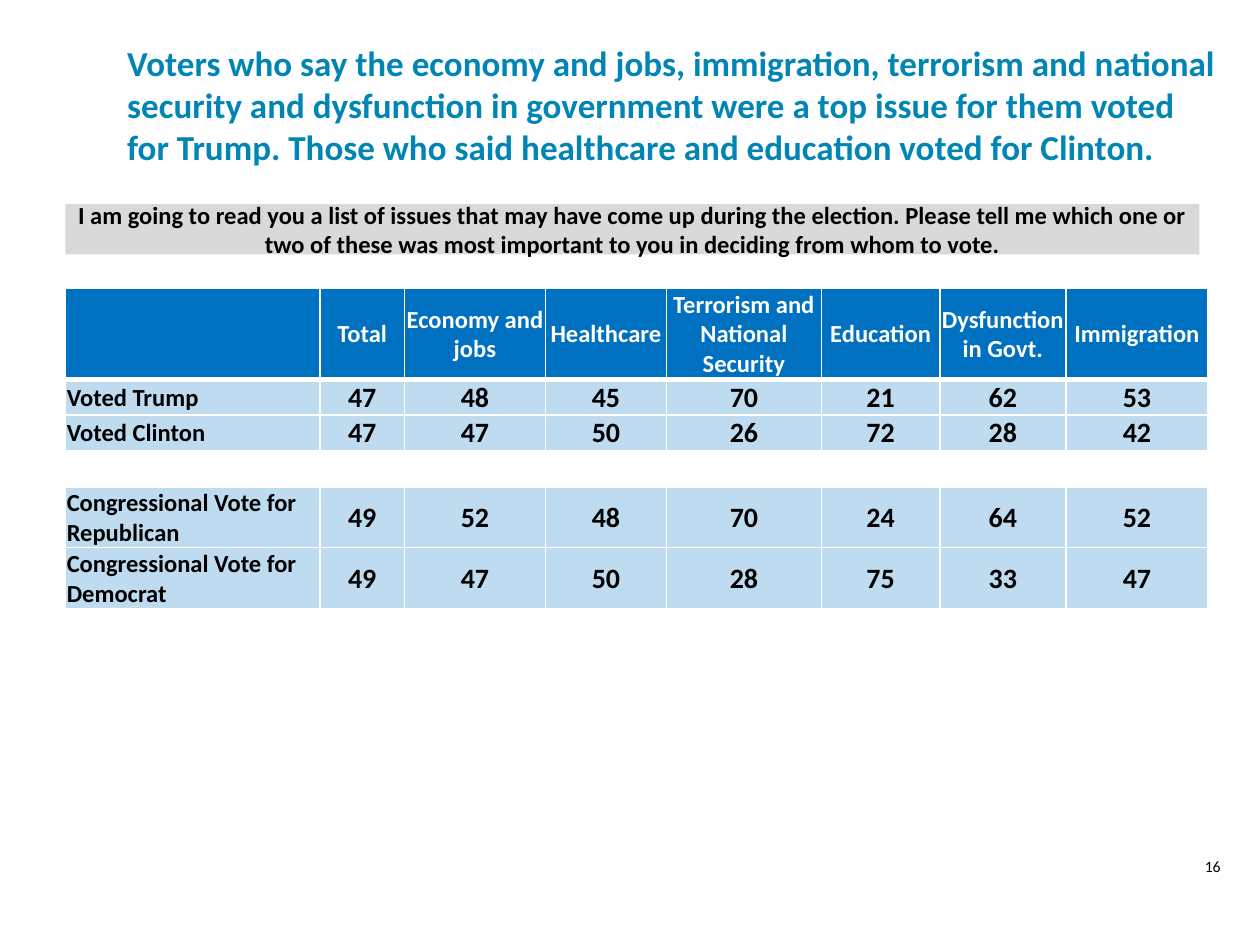
from lxml.etree import SubElement as Sub
from pptx import Presentation
from pptx.dml.color import RGBColor
from pptx.enum.shapes import MSO_SHAPE as Shape
from pptx.enum.text import MSO_ANCHOR as Anchor, MSO_AUTO_SIZE as Auto, PP_ALIGN as Align
from pptx.oxml.ns import qn
from pptx.util import Inches, Pt

TITLE = [
    "Voters who say the economy and jobs, immigration, terrorism and national "
    "security and dysfunction in government were a top issue for them voted",
    "for Trump. Those who said healthcare and education voted for Clinton.",
]
ASK = ("I am going to read you a list of issues that may have come up during the election. "
       "Please tell me which one or two of these was most important to you in deciding "
       "from whom to vote.")
PAGE = "16"
ROWS = [
    ("", "Total", "Economy and jobs", "Healthcare", "Terrorism and National Security",
     "Education", "Dysfunction in Govt.", "Immigration"),
    ("Voted Trump", 47, 48, 45, 70, 21, 62, 53),
    ("Voted Clinton", 47, 47, 50, 26, 72, 28, 42),
    ("",) * 8,
    ("Congressional Vote for Republican", 49, 52, 48, 70, 24, 64, 52),
    ("Congressional Vote for Democrat", 49, 47, 50, 28, 75, 33, 47),
]
WIDTHS = [2.02, 0.67, 1.12, 0.96, 1.23, 0.94, 1, 1.13]
HEIGHTS = [0.71, 0.28, 0.28, 0.29, 0.48, 0.48]
INSETS = {"margin_left": 0.01, "margin_right": 0.01, "margin_top": 0.01, "margin_bottom": 0}
BLUE, PALE, GREY, TEAL = "0070C0", "BFDBEF", "D9D9D9", "0085B4"
WHITE, BLACK = "FFFFFF", "000000"


def paint(fill, tone):
    """Give a fill one solid colour."""
    fill.solid()
    fill.fore_color.rgb = RGBColor.from_string(tone)


def write(frame, lines, size, tone, align, bold=True):
    """Put formatted paragraphs into a text frame."""
    frame.word_wrap = True
    for i, line in enumerate(lines):
        para = frame.add_paragraph() if i else frame.paragraphs[0]
        para.alignment = align
        if not line:
            Sub(para._p, qn("a:endParaRPr"), sz=str(size * 100))
            continue
        run = para.add_run()
        run.text = line
        for key, val in {"name": "Calibri", "size": Pt(size), "bold": bold}.items():
            setattr(run.font, key, val)
        run.font.color.rgb = RGBColor.from_string(tone)


def edge(cell, head):
    """Draw white borders round a cell, thick below the header."""
    props = cell._tc.get_or_add_tcPr()
    for side in "LRTB":
        wide = 3 if head and side == "B" else 1
        line = Sub(props, qn("a:ln" + side), w=str(Pt(wide)))
        Sub(Sub(line, qn("a:solidFill")), qn("a:srgbClr"), val=WHITE)


def fill_cell(cell, r, c, value):
    """Format and fill one table cell."""
    head = r == 0
    for key, val in INSETS.items():
        setattr(cell, key, Inches(val))
    cell.vertical_anchor = Anchor.MIDDLE
    edge(cell, head)
    if head or any(ROWS[r]):
        paint(cell.fill, BLUE if head else PALE)
    else:
        cell.fill.background()
    write(cell.text_frame, [str(value)], 14 if head or c == 0 else 16,
          WHITE if head else BLACK, Align.LEFT if c == 0 else Align.CENTER)


def add_grid(slide):
    """Add the table of votes by issue."""
    box = map(Inches, (0.52, 2.29, sum(WIDTHS), sum(HEIGHTS)))
    grid = slide.shapes.add_table(len(ROWS), len(WIDTHS), *box).table
    grid.horz_banding = False
    for col, wide in zip(grid.columns, WIDTHS):
        col.width = Inches(wide)
    for row, high in zip(grid.rows, HEIGHTS):
        row.height = Inches(high)
    for r, row in enumerate(ROWS):
        for c, value in enumerate(row):
            fill_cell(grid.cell(r, c), r, c, value)


def main():
    """Build the slide and save it."""
    deck = Presentation()
    deck.slide_width, deck.slide_height = Inches(10), Inches(7.5)
    slide = deck.slides.add_slide(deck.slide_layouts[5])

    title = slide.shapes.title
    spot = {"left": 0.91, "top": 0.25, "width": 9.09, "height": 1.16}
    for key, val in spot.items():
        setattr(title, key, Inches(val))
    title.text_frame.auto_size = Auto.NONE
    title.text_frame.vertical_anchor = Anchor.MIDDLE
    write(title.text_frame, TITLE, 20, TEAL, Align.LEFT)

    ask = slide.shapes.add_shape(Shape.RECTANGLE, *map(Inches, (0.52, 1.62, 9, 0.4)))
    ask.shadow.inherit = False
    paint(ask.fill, GREY)
    ask.line.fill.background()
    ask.text_frame.vertical_anchor = Anchor.MIDDLE
    write(ask.text_frame, [ASK], 14, BLACK, Align.CENTER)

    add_grid(slide)
    page = slide.shapes.add_textbox(*map(Inches, (9.25, 6.75, 0.75, 0.33)))
    write(page.text_frame, [PAGE], 9, BLACK, Align.CENTER, False)
    deck.save("out.pptx")


if __name__ == "__main__":
    main()
